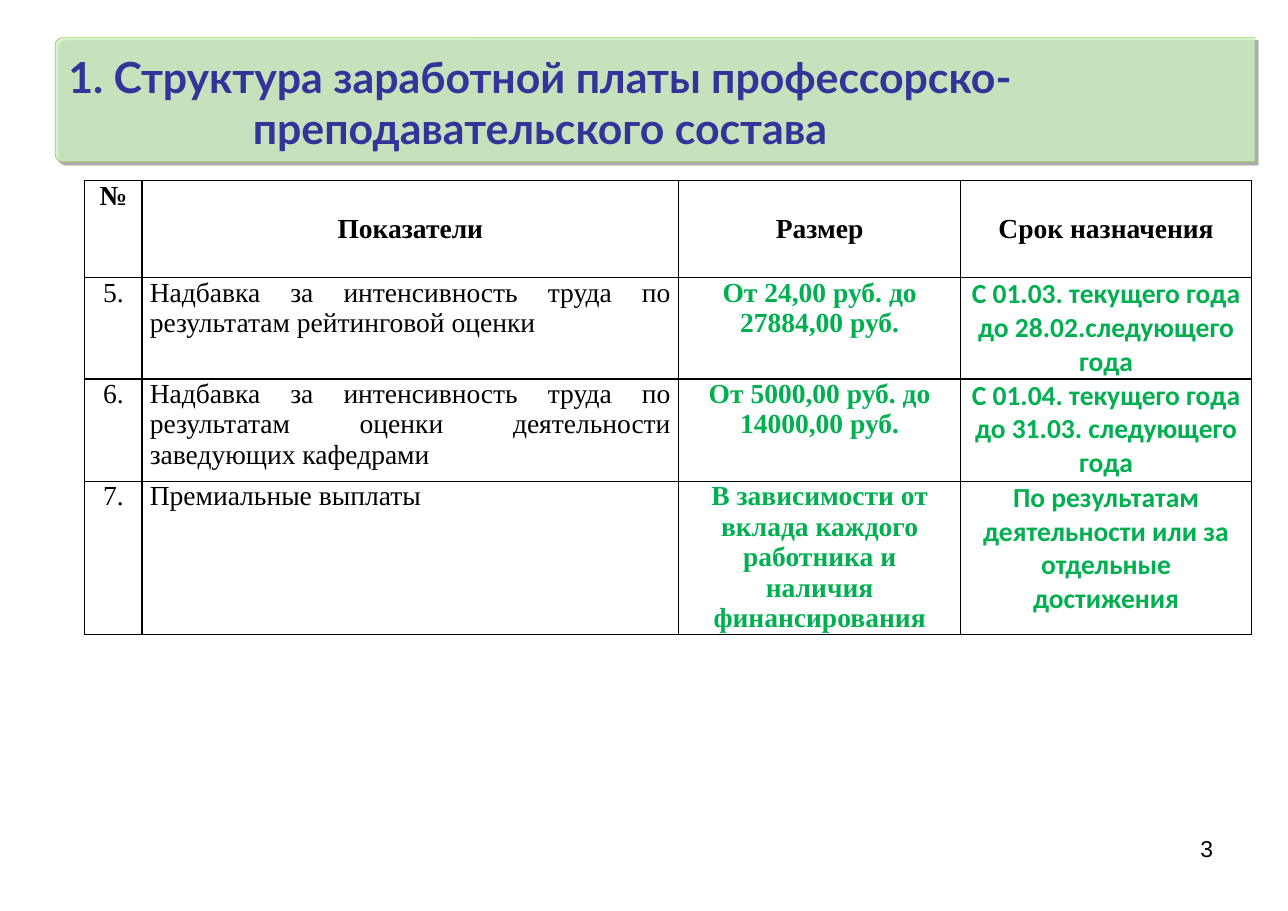
from pptx import Presentation
from pptx.dml.color import RGBColor
from pptx.enum.shapes import MSO_SHAPE
from pptx.enum.text import MSO_ANCHOR as ANCHOR, PP_ALIGN as ALIGN
from pptx.oxml import parse_xml
from pptx.oxml.ns import nsdecls
from pptx.util import Inches, Pt

COLORS = {"banner": "CDF0C2", "edge": "78B012", "title": "333399",
          "text": "000000", "accent": "00B050"}
SERIF = "Times New Roman"

TITLE = "1. Структура заработной платы профессорско-преподавательского состава"
HEADER = ["№", "Показатели", "Размер", "Срок назначения"]
ROWS = [
    ["5.", "Надбавка за интенсивность труда по результатам рейтинговой оценки",
     "От 24,00 руб. до 27884,00 руб.",
     "С 01.03. текущего года до 28.02.следующего года"],
    ["6.", "Надбавка за интенсивность труда по результатам оценки деятельности "
     "заведующих кафедрами",
     "От 5000,00 руб. до 14000,00 руб.",
     "С 01.04. текущего года до 31.03. следующего года"],
    ["7.", "Премиальные выплаты",
     "В зависимости от вклада каждого работника и наличия финансирования",
     "По результатам деятельности или за отдельные достижения"],
]
COL_WIDTHS = [0.52, 4.87, 2.56, 2.64]
ROW_HEIGHTS = [0.88, 0.92, 0.93, 1.39]
# Format of the body cells, column by column
COL_FORMATS = [
    dict(),
    dict(align=ALIGN.JUSTIFY),
    dict(color="accent", bold=True),
    dict(color="accent", bold=True, font="Calibri"),
]


def rgb(name):
    return RGBColor.from_string(COLORS[name])


def write(tf, text, size=18, font=SERIF, color="text", bold=False,
          align=ALIGN.CENTER):
    p = tf.paragraphs[0]
    p.alignment = align
    r = p.add_run()
    r.text = text
    r.font.size, r.font.name, r.font.bold = Pt(size), font, bold
    r.font.color.rgb = rgb(color)


def set_insets(box, x, y):
    box.margin_left = box.margin_right = Inches(x)
    box.margin_top = box.margin_bottom = Inches(y)


def add_banner(slide, left, top, width, height):
    # A quarter turn puts the two rounded corners on the left
    sp = slide.shapes.add_shape(
        MSO_SHAPE.ROUND_2_SAME_RECTANGLE,
        Inches(left + (width - height) / 2), Inches(top + (height - width) / 2),
        Inches(height), Inches(width))
    sp.rotation = 270
    sp.adjustments[0] = 0.06
    sp.fill.solid()
    sp.fill.fore_color.rgb = rgb("banner")
    sp.line.color.rgb = rgb("edge")
    sp.line.width = Pt(0.25)

    # Transparent fill and hard shadow
    sp_pr = sp._element.spPr
    sp_pr.find(".//{*}srgbClr").append(
        parse_xml(f'<a:alpha {nsdecls("a")} val="80000"/>'))
    sp_pr.append(parse_xml(
        f'<a:effectLst {nsdecls("a")}><a:outerShdw dist="38100" dir="2700000" '
        'rotWithShape="0"><a:srgbClr val="000000"><a:alpha val="40000"/>'
        '</a:srgbClr></a:outerShdw></a:effectLst>'))

    # Title in front of the banner
    title = slide.shapes.title
    title.left, title.top = Inches(left), Inches(top + 0.02)
    title.width, title.height = Inches(8.8), Inches(height)
    tf = title.text_frame
    tf.word_wrap = True
    tf.vertical_anchor = ANCHOR.MIDDLE
    set_insets(tf, 0, 0)
    write(tf, TITLE, size=28, font="Lato", color="title", bold=True)
    sp._element.addnext(title._element)


def add_borders(cell):
    tc_pr = cell._tc.get_or_add_tcPr()
    for i, side in enumerate(("lnL", "lnR", "lnT", "lnB")):
        tc_pr.insert(i, parse_xml(
            f'<a:{side} {nsdecls("a")} w="12700"><a:solidFill>'
            f'<a:srgbClr val="{COLORS["text"]}"/></a:solidFill></a:{side}>'))


def add_pay_table(slide, left, top):
    table = slide.shapes.add_table(
        len(ROW_HEIGHTS), len(COL_WIDTHS), Inches(left), Inches(top),
        Inches(sum(COL_WIDTHS)), Inches(sum(ROW_HEIGHTS))).table
    table.first_row = table.horz_banding = False
    for col, width in zip(table.columns, COL_WIDTHS):
        col.width = Inches(width)
    for row, height in zip(table.rows, ROW_HEIGHTS):
        row.height = Inches(height)

    for i, texts in enumerate([HEADER] + ROWS):
        for j, text in enumerate(texts):
            cell = table.cell(i, j)
            set_insets(cell, 0.07, 0)
            cell.fill.background()
            add_borders(cell)
            # Header captions are centred, all but the number sign
            cell.vertical_anchor = ANCHOR.MIDDLE if i == 0 and j else ANCHOR.TOP
            write(cell.text_frame, text,
                  **(COL_FORMATS[j] if i else dict(bold=True)))


def add_page_number(slide, left, top, width, height):
    box = slide.shapes.add_textbox(Inches(left), Inches(top),
                                   Inches(width), Inches(height))
    box.text_frame.word_wrap = True
    write(box.text_frame, "3", size=15, font="Arial", align=ALIGN.RIGHT)


def main():
    prs = Presentation()
    prs.slide_width, prs.slide_height = Inches(11.69), Inches(8.27)
    slide = prs.slides.add_slide(prs.slide_layouts[5])
    add_banner(slide, 0.5, 0.34, 10.89, 1.13)
    add_pay_table(slide, 0.77, 1.64)
    add_page_number(slide, 8.38, 7.53, 2.73, 0.57)
    prs.save("out.pptx")


if __name__ == "__main__":
    main()
